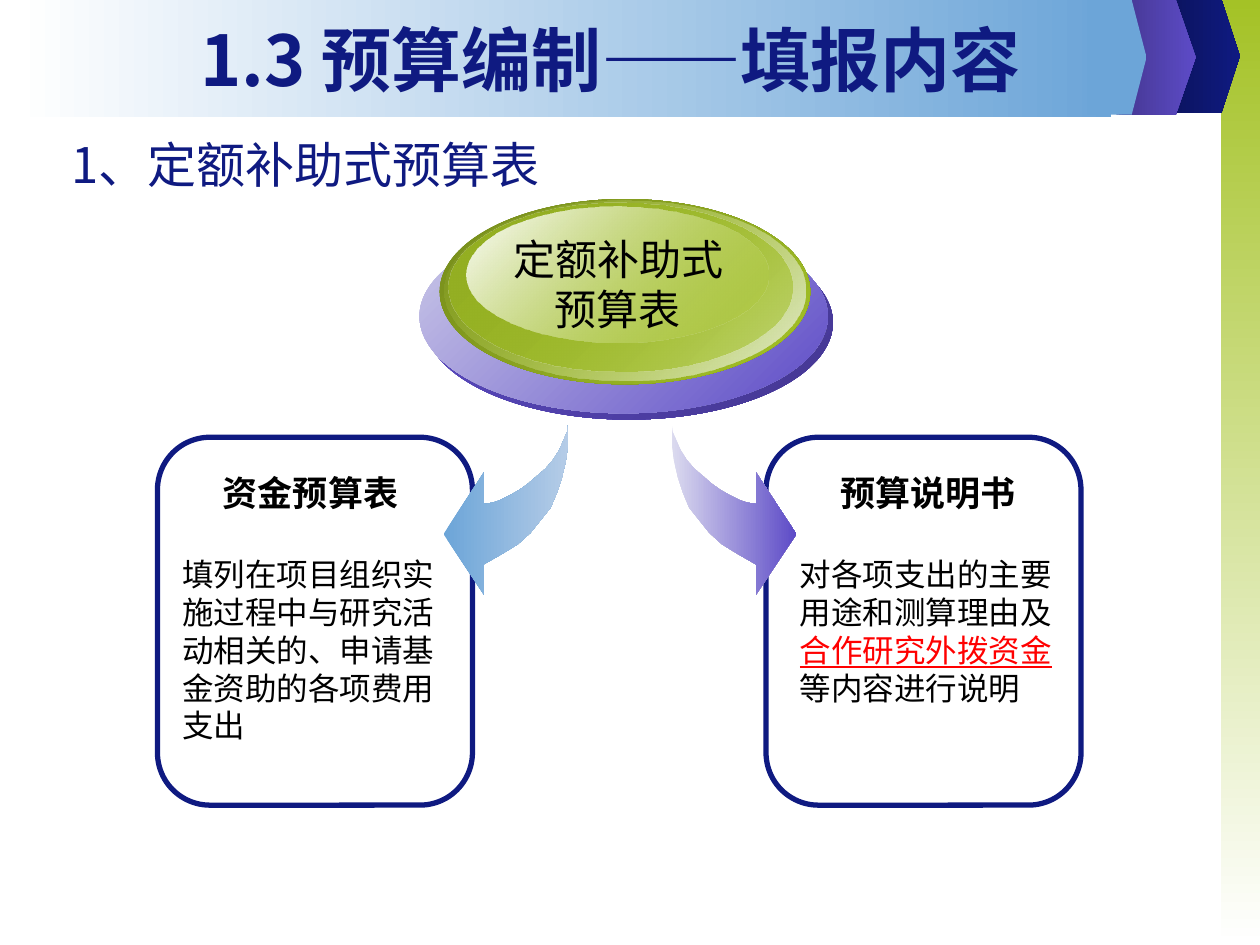
"""Builds the slide on the fixed-grant budget table and its two parts."""
from pptx import Presentation
from pptx import util as u
from pptx.dml.color import RGBColor
from pptx.enum import shapes, text
from pptx.oxml.ns import qn
from lxml import etree

FONT = "Noto Sans CJK SC"
NAVY, BLUE, LIME, PLUM = "0F1A81", "6CA5D8", "A4C226", "5D4BC7"
KIND = shapes.MSO_SHAPE
MID = text.PP_ALIGN.CENTER


def paint(shape, first, last, turn=0, clear=(100, 100)):
    """Fill a shape with a two-colour gradient turned clockwise."""
    shape.shadow.inherit = False
    shape.line.fill.background()
    shape.fill.gradient()
    shape.fill.gradient_angle = -turn % 360
    for stop, tone in zip(shape.fill.gradient_stops, (first, last)):
        stop.color.rgb = RGBColor.from_string(tone)
    for node, part in zip(shape.element.iter(qn("a:srgbClr")), clear):
        if part < 100:
            etree.SubElement(node, qn("a:alpha")).set("val", str(part * 1000))


def write(para, words, size=18, tone="000000", bold=False, under=False,
          align=text.PP_ALIGN.LEFT, gap=0):
    """Add a formatted run to a paragraph."""
    para.alignment = align
    para.line_spacing = u.Pt(size * 1.2)
    para.space_before = u.Pt(gap)
    run = para.add_run()
    run.text = words
    font = run.font
    font.name, font.size = FONT, u.Pt(size)
    font.bold, font.underline = bold, under
    font.color.rgb = RGBColor.from_string(tone)
    etree.SubElement(font._element, qn("a:ea")).set("typeface", FONT)


deck = Presentation()
deck.slide_width, deck.slide_height = u.Inches(10), u.Inches(7.5)
slide = deck.slides.add_slide(deck.slide_layouts[5])
parts = slide.shapes

bands = [
    (KIND.RECTANGLE, 9.69, 0, 0.31, 7.5, LIME, "FFFFFF", 90),
    (KIND.PENTAGON, 9.25, -0.01, 0.59, 0.91, "0B135C", NAVY, 0),
    (KIND.PENTAGON, 8.86, 0, 0.63, 0.91, "43368E", PLUM, 0),
    (KIND.RECTANGLE, 0.12, 0, 8.7, 0.93, "FFFFFF", BLUE, 0),
    (KIND.PENTAGON, 8.63, 0, 0.47, 0.91, BLUE, BLUE, 0),
]
for kind, *place, first, last, turn in bands:
    band = parts.add_shape(kind, *map(u.Inches, place))
    if kind == KIND.PENTAGON:
        band.adjustments[0] = 0.25
    paint(band, first, last, turn)

title = parts.title
title.element.getparent().append(title.element)
title.left, title.top = u.Inches(0.67), u.Inches(0.13)
title.width, title.height = u.Inches(8.35), u.Inches(0.67)
title.text_frame.vertical_anchor = text.MSO_ANCHOR.MIDDLE
write(title.text_frame.paragraphs[0], "1.3 预算编制——填报内容",
      size=40, tone=NAVY, bold=True, align=MID)

cards = [
    (1.25, 1.35, "资金预算表",
     [("填列在项目组织实施过程中与研究活动相关的、申请基金资助的各项费用支出", {})]),
    (6.08, 6.25, "预算说明书",
     [("对各项支出的主要用途和测算理由及", {}),
      ("合作研究外拨资金", {"tone": "FF0000", "under": True}),
      ("等内容进行说明", {})]),
]
for left, inner, head, body in cards:
    card = parts.add_shape(KIND.ROUNDED_RECTANGLE, u.Inches(left),
                           u.Inches(3.47), u.Inches(2.5), u.Inches(2.92))
    card.shadow.inherit = False
    card.fill.background()
    card.line.color.rgb = RGBColor.from_string(NAVY)
    card.line.width = u.Pt(3)
    frame = parts.add_textbox(u.Inches(inner), u.Inches(3.69),
                              u.Inches(2.23), u.Inches(2.36)).text_frame
    frame.word_wrap = True
    write(frame.paragraphs[0], head, size=20, bold=True, align=MID)
    para = frame.add_paragraph()
    for words, style in body:
        write(para, words, gap=24, **style)

curve = [
    (4.51, 3.36), (4.51, 3.52), (4.49, 3.66), (4.46, 3.79), (4.42, 3.91),
    (4.37, 4.03), (4.29, 4.13), (4.21, 4.23), (4.11, 4.32), (3.98, 4.4),
    (3.84, 4.48), (3.84, 4.72), (3.52, 4.24), (3.84, 3.75), (3.84, 4),
    (3.91, 3.99), (3.97, 3.97), (4.05, 3.93), (4.12, 3.89), (4.19, 3.84),
    (4.26, 3.78), (4.33, 3.72), (4.39, 3.65), (4.44, 3.57), (4.47, 3.5),
    (4.5, 3.43),
]
mirror = [(9.84 - x, y) for x, y in curve]
for points, first, last in ((curve, BLUE, "B5CCE7"), (mirror, "DCDBEF", PLUM)):
    spots = [(u.Inches(x), u.Inches(y)) for x, y in points]
    path = parts.build_freeform(*spots[0])
    path.add_line_segments(spots[1:], close=True)
    paint(path.convert_to_shape(), first, last)

discs = [
    (3.37, 1.79, 3.24, 1.54, PLUM, "443791", (100, 100)),
    (3.33, 1.74, 3.24, 1.54, "CCCAE8", PLUM, (100, 100)),
    (3.49, 1.58, 2.94, 1.47, "758B1B", LIME, (100, 100)),
    (3.53, 1.59, 2.86, 1.43, LIME, "E5ECD4", (0, 100)),
    (3.56, 1.61, 2.73, 1.34, "94AF22", LIME, (100, 48)),
    (3.7, 1.64, 2.4, 1.08, "FFFFFF", LIME, (100, 38)),
]
for *place, first, last, clear in discs:
    disc = parts.add_shape(KIND.OVAL, *map(u.Inches, place))
    paint(disc, first, last, 45, clear)

labels = [
    ((3.67, 1.8, 2.47, 0.91), ["定额补助式", "预算表"],
     {"size": 24, "align": MID}),
    ((0.47, 1.02, 5.08, 0.88), ["1、定额补助式预算表"],
     {"size": 28, "tone": NAVY}),
]
for place, lines, style in labels:
    frame = parts.add_textbox(*map(u.Inches, place)).text_frame
    frame.word_wrap = True
    for row, line in enumerate(lines):
        para = frame.add_paragraph() if row else frame.paragraphs[0]
        write(para, line, **style)

deck.save("out.pptx")
